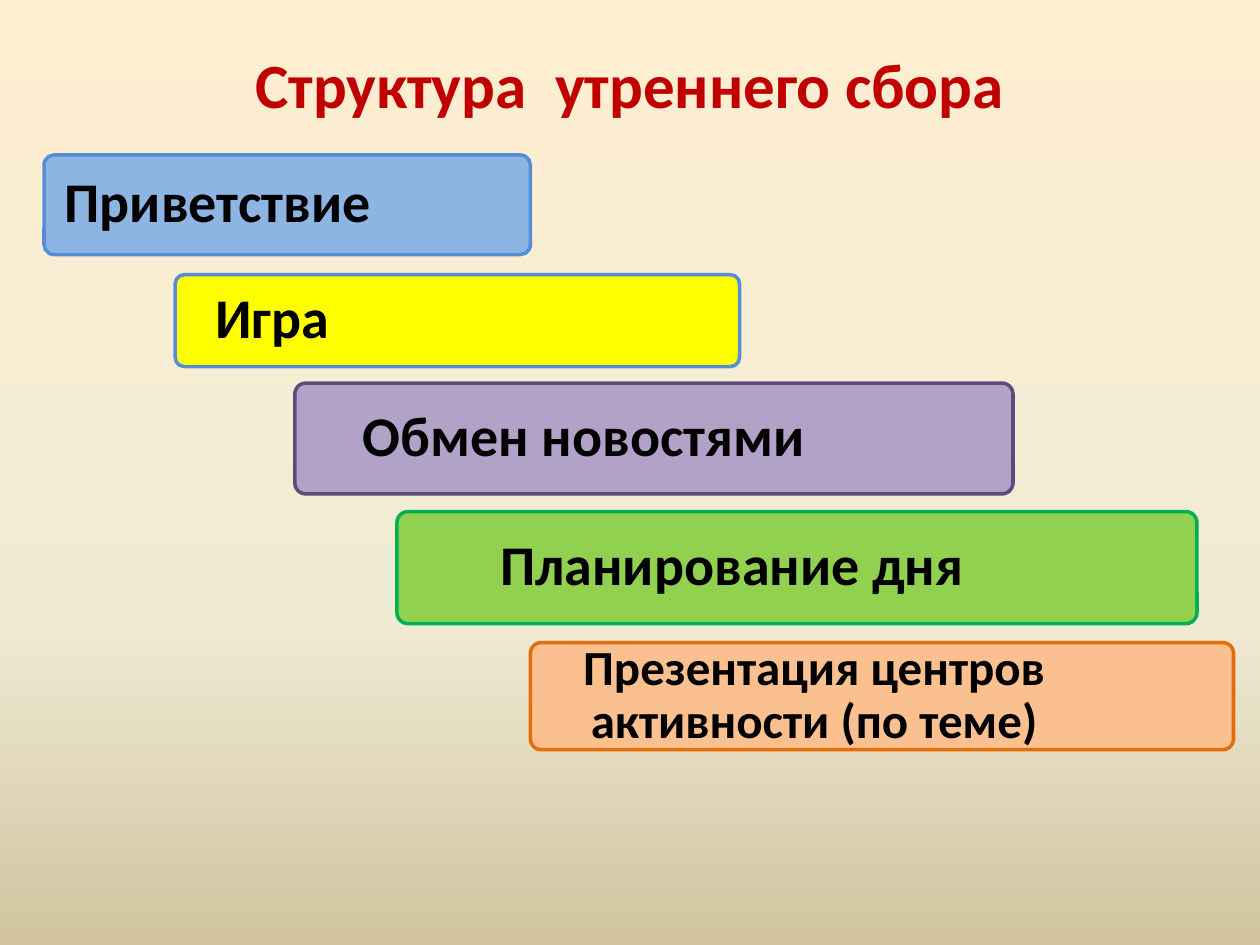
import copy

import pptx
import pptx.util
from pptx.dml.color import RGBColor
from pptx.enum.shapes import MSO_SHAPE
from pptx.enum.text import MSO_ANCHOR, PP_ALIGN
from pptx.oxml.ns import qn
from pptx.util import Inches, Pt

BLACK = RGBColor(0x00, 0x00, 0x00)
TITLE_RED = RGBColor(0xC0, 0x00, 0x00)
BLUE = RGBColor(0x8E, 0xB4, 0xE3)
BLUE_LINE = RGBColor(0x55, 0x8E, 0xD5)
YELLOW = RGBColor(0xFF, 0xFF, 0x00)
PURPLE = RGBColor(0xB3, 0xA2, 0xC7)
PURPLE_LINE = RGBColor(0x60, 0x4A, 0x7B)
GREEN = RGBColor(0x92, 0xD0, 0x50)
GREEN_LINE = RGBColor(0x00, 0xB0, 0x50)
ORANGE = RGBColor(0xFA, 0xC0, 0x90)
ORANGE_LINE = RGBColor(0xE4, 0x6C, 0x0A)
BACKGROUND = [
    (0, RGBColor(0xFF, 0xEF, 0xD1)),
    (0.65, RGBColor(0xF0, 0xEB, 0xD5)),
    (1, RGBColor(0xD1, 0xC3, 0x9F)),
]


def add_box(kind, bounds, fill, line=None):
    sp = s.shapes.add_shape(kind, *[Inches(v) for v in bounds])
    sp.shadow.inherit = False
    sp.fill.solid()
    sp.fill.fore_color.rgb = fill
    if line is None:
        sp.line.fill.background()
    else:
        sp.adjustments[0] = 0.1
        sp.line.color.rgb = line
        sp.line.width = Pt(2)
    return sp


def set_text(sp, text, size, color, align, insets):
    """Write one bold paragraph; insets are left, top, right, bottom in inches."""
    tf = sp.text_frame
    tf.word_wrap = True
    tf.margin_left, tf.margin_top, tf.margin_right, tf.margin_bottom = map(Inches, insets)
    p = tf.paragraphs[0]
    p.text = text
    p.alignment = align
    p.font.name = "Calibri"
    p.font.size = Pt(size)
    p.font.bold = True
    p.font.color.rgb = color
    return tf


prs = pptx.Presentation()
prs.slide_width = Inches(10)
prs.slide_height = Inches(7.5)
s = prs.slides.add_slide(prs.slide_layouts[6])

# Three-stop background, running from top to bottom
bg = s.background.fill
bg.gradient()
bg.gradient_angle = 270
stop_list = next(s.element.iter(qn("a:gsLst")))
stop_list.append(copy.deepcopy(stop_list[0]))
for stop, (position, color) in zip(bg.gradient_stops, BACKGROUND):
    stop.position = position
    stop.color.rgb = color

title = s.shapes.add_textbox(Inches(0.78), Inches(0.31), Inches(8.44), Inches(0.71))
set_text(title, "Структура  утреннего сбора", 36, TITLE_RED, PP_ALIGN.CENTER,
         (0.1, 0.05, 0.1, 0.05))

# Steps: text, size, alignment, box, fill, line, right inset
steps = [
    ("Приветствие", 32, PP_ALIGN.LEFT, (0.35, 1.23, 3.86, 0.79), BLUE, BLUE_LINE, 1.07),
    ("Обмен новостями", 32, PP_ALIGN.CENTER, (2.34, 3.04, 5.7, 0.88), PURPLE, PURPLE_LINE, 1.25),
    ("Планирование дня", 32, PP_ALIGN.CENTER, (3.15, 4.06, 6.35, 0.89), GREEN, GREEN_LINE, 1.17),
    ("Презентация центров активности (по теме)", 28, PP_ALIGN.CENTER,
     (4.21, 5.1, 5.58, 0.85), ORANGE, ORANGE_LINE, 1.22),
]
for text, size, align, bounds, fill, line, right in steps:
    box = add_box(MSO_SHAPE.ROUNDED_RECTANGLE, bounds, fill, line)
    tf = set_text(box, text, size, BLACK, align, (0.14, 0.14, right, 0.14))
    tf.vertical_anchor = MSO_ANCHOR.MIDDLE
    tf.paragraphs[0].line_spacing = 0.9

# The game step has its label in a separate rectangle
add_box(MSO_SHAPE.ROUNDED_RECTANGLE, (1.39, 2.18, 4.48, 0.73), YELLOW, BLUE_LINE)
label = add_box(MSO_SHAPE.RECTANGLE, (1.58, 2.2, 3.4, 0.69), YELLOW)
tf = set_text(label, "Игра", 32, BLACK, PP_ALIGN.LEFT, (0.13, 0.13, 0.13, 0.13))
tf.vertical_anchor = MSO_ANCHOR.MIDDLE
tf.paragraphs[0].line_spacing = 0.9

prs.save("out.pptx")
